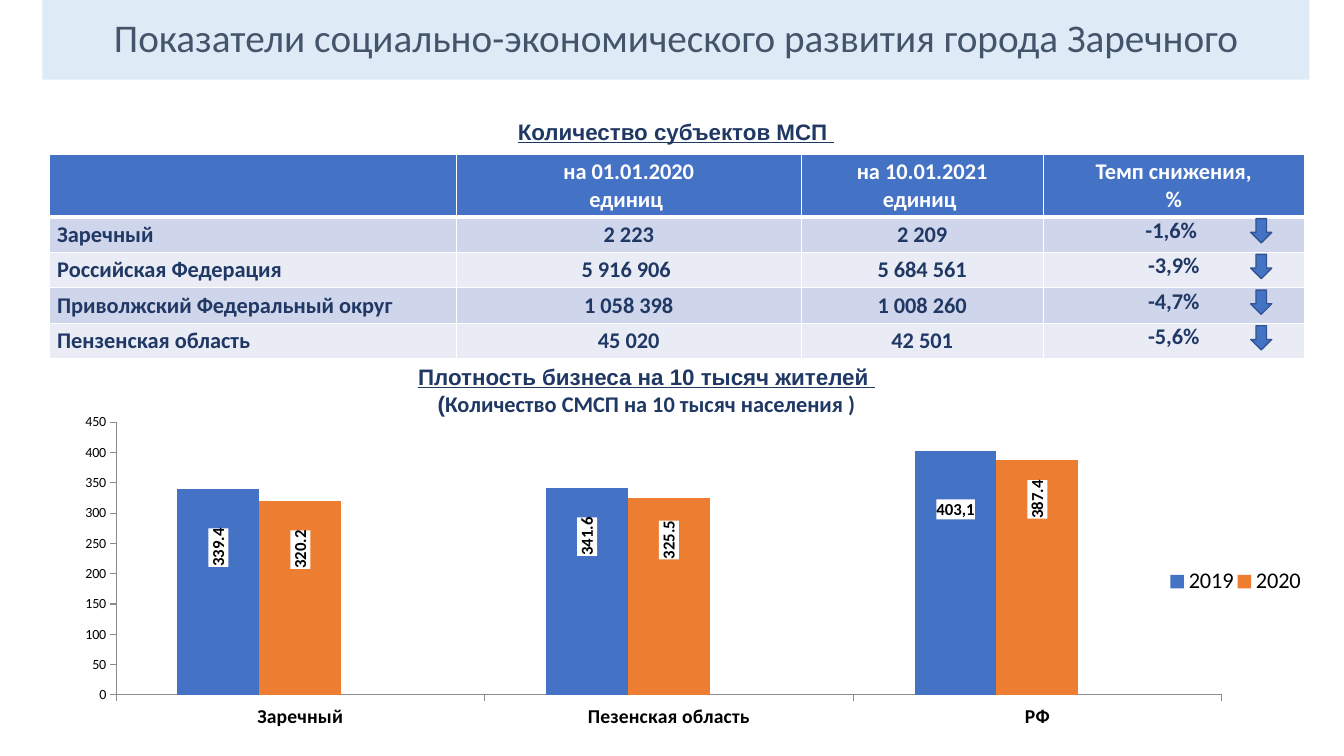
from pptx import Presentation
from pptx.chart.data import CategoryChartData
from pptx.dml.color import RGBColor
from pptx.enum.chart import XL_CHART_TYPE, XL_LABEL_POSITION, XL_LEGEND_POSITION, XL_TICK_MARK
from pptx.enum.shapes import MSO_SHAPE
from pptx.enum.text import MSO_ANCHOR, MSO_AUTO_SIZE, PP_ALIGN
from pptx.oxml import parse_xml
from pptx.oxml.ns import nsdecls, qn
from pptx.util import Cm, Pt

CENTER, LEFT, MIDDLE = PP_ALIGN.CENTER, PP_ALIGN.LEFT, MSO_ANCHOR.MIDDLE
COLUMN, DOWN_ARROW = XL_CHART_TYPE.COLUMN_CLUSTERED, MSO_SHAPE.DOWN_ARROW
INSIDE_END, LEGEND_RIGHT = XL_LABEL_POSITION.INSIDE_END, XL_LEGEND_POSITION.RIGHT
TICK_OUT, TICK_NONE = XL_TICK_MARK.OUTSIDE, XL_TICK_MARK.NONE
BLUE, ORANGE, GRAY = "4472C4", "ED7D31", "A5A5A5"
NAVY, WHITE, BLACK = "203864", "FFFFFF", "000000"
BANDS = ("CFD5EA", "E9EBF5")

ROWS = [
    ("", "на 01.01.2020\nединиц ", "на 10.01.2021\nединиц ", "Темп снижения,\n%"),
    ("Заречный", "2 223", "2 209", "-1,6% "),
    ("Российская Федерация", "5 916 906 ", "5 684 561", "-3,9%"),
    ("Приволжский Федеральный округ", "1 058 398", "1 008 260", "-4,7%"),
    ("Пензенская область", "45 020", "42 501", "-5,6%"),
]
COL_WIDTHS = (10.26, 8.69, 6.1, 6.58)
ROW_HEIGHTS = (1.27, 0.79, 0.79, 0.84, 0.79)

CATEGORIES = ("Заречный", "Пезенская область", "РФ")
# name, values, colour, downward shift of each label as a share of the chart height
SERIES = [
    ("2019", (339.4, 341.6, 403.1), BLUE, (0.11, 0.08, 0.14)),
    ("2020", (320.2, 325.5, 387.4), ORANGE, (0.08, 0.06, 0.05)),
    ("Series 3", (None, None, None), GRAY, ()),
]
LABEL_TEXTS = {("2019", 2): "403,1"}


def rgb(color):
    return RGBColor.from_string(color)


def set_fill(fill, color):
    fill.solid()
    fill.fore_color.rgb = rgb(color)


def set_font(font, size, color, bold=None, name="Calibri"):
    font.size, font.name, font.bold = Pt(size), name, bold
    font.color.rgb = rgb(color)


def solid_xml(tag, color, attrs=""):
    return parse_xml(f'<{tag} {nsdecls("a", "c")} {attrs}><a:solidFill>'
                     f'<a:srgbClr val="{color}"/></a:solidFill></{tag}>')


def set_layout(parent, index, **values):
    """Give a chart part a manual layout as its child number index."""
    for old in parent.findall(qn("c:layout")):
        parent.remove(old)
    items = "".join(f'<c:{tag} val="{val}"/>' for tag, val in values.items())
    parent.insert(index, parse_xml(f'<c:layout {nsdecls("c")}><c:manualLayout>{items}'
                                   '</c:manualLayout></c:layout>'))


class SlideBuilder:
    def __init__(self, prs):
        self.slide = prs.slides.add_slide(prs.slide_layouts[5])
        self.shapes = self.slide.shapes

    def title(self, text, left, top, width, height):
        sp = self.shapes.title
        sp.left, sp.top, sp.width, sp.height = Cm(left), Cm(top), Cm(width), Cm(height)
        set_fill(sp.fill, "DEEBF7")
        tf = sp.text_frame
        tf.text = text
        tf.auto_size, tf.vertical_anchor = MSO_AUTO_SIZE.NONE, MIDDLE
        p = tf.paragraphs[0]
        p.alignment, p.line_spacing = CENTER, 0.9
        set_font(p.font, 28, "44546A")

    def heading(self, text, left, top, width, height, note=()):
        """Add an underlined heading and an optional line of (text, font) runs."""
        tf = self.shapes.add_textbox(Cm(left), Cm(top), Cm(width), Cm(height)).text_frame
        tf.word_wrap = True
        p = tf.paragraphs[0]
        p.text, p.alignment = text, CENTER
        set_font(p.font, 16, NAVY, True, "Arial")
        p.font.underline = True
        if note:
            p = tf.add_paragraph()
            p.alignment = CENTER
        for part, name in note:
            r = p.add_run()
            r.text = part
            set_font(r.font, 16, NAVY, True, name)

    def table(self, left, top):
        table = self.shapes.add_table(len(ROWS), len(COL_WIDTHS), Cm(left), Cm(top),
                                      Cm(sum(COL_WIDTHS)), Cm(sum(ROW_HEIGHTS))).table
        for column, width in zip(table.columns, COL_WIDTHS):
            column.width = Cm(width)
        for i, (row, height) in enumerate(zip(table.rows, ROW_HEIGHTS)):
            row.height = Cm(height)
            for j, (cell, text) in enumerate(zip(row.cells, ROWS[i])):
                set_fill(cell.fill, BANDS[(i - 1) % 2] if i else BLUE)
                side, edge = (0, 0) if i and j == 3 else (0.2, 0.1)
                cell.margin_left = cell.margin_right = Cm(side)
                cell.margin_top = cell.margin_bottom = Cm(edge)
                if i == 0:
                    border = solid_xml("a:lnB", WHITE, f'w="{Pt(3)}"')
                    cell._tc.get_or_add_tcPr().insert(0, border)
                cell.text = text
                for p in cell.text_frame.paragraphs:
                    p.alignment = CENTER if j else LEFT
                    set_font(p.font, 16, NAVY if i else WHITE, True)

    def arrow(self, left, top):
        sp = self.shapes.add_shape(DOWN_ARROW, Cm(left), Cm(top), Cm(0.53), Cm(0.61))
        sp.shadow.inherit = False
        set_fill(sp.fill, BLUE)
        sp.line.color.rgb, sp.line.width = rgb("325491"), Pt(1)

    def chart(self, left, top, width, height):
        data = CategoryChartData()
        data.categories = CATEGORIES
        for name, values, _, _ in SERIES:
            data.add_series(name, values)
        chart = self.shapes.add_chart(COLUMN, Cm(left), Cm(top), Cm(width), Cm(height),
                                      data).chart
        chart.has_title = False
        set_font(chart.font, 10, BLACK)
        plot = chart.plots[0]
        plot.vary_by_categories, plot.gap_width = False, 150
        for axis in (chart.category_axis, chart.value_axis):
            axis.has_major_gridlines = False
            axis.major_tick_mark, axis.minor_tick_mark = TICK_OUT, TICK_NONE
            axis.format.line.color.rgb = rgb("8B8B8B")
        set_font(chart.category_axis.tick_labels.font, 14, BLACK, True)
        for series, (_, _, color, shifts) in zip(plot.series, SERIES):
            set_fill(series.format.fill, color)
            for i, shift in enumerate(shifts):
                self.bar_label(series, i, shift)
        for lines in chart.element.iter(qn("c:showLeaderLines")):
            lines.set("val", "0")
        self.legend(chart)
        set_layout(chart.element.find(".//" + qn("c:plotArea")), 0, layoutTarget="inner",
                   xMode="edge", yMode="edge", x=0.045, y=0.031, w=0.879, h=0.854)

    def bar_label(self, series, index, shift):
        """Put a white label into a bar, turned upright unless its text is fixed."""
        label = series.points[index].data_label
        text = LABEL_TEXTS.get((series.name, index))
        if text:
            r = label.text_frame.paragraphs[0].add_run()
            r.text = text
        set_font(r.font if text else label.font, 12, BLACK, True)
        label.position = INSIDE_END
        dlbl = series._element.xpath(f'c:dLbls/c:dLbl[c:idx/@val="{index}"]')[0]
        for body in dlbl.xpath("c:txPr/a:bodyPr"):
            body.set("rot", "-5400000")
        dlbl.xpath("c:txPr | c:dLblPos")[0].addprevious(solid_xml("c:spPr", WHITE))
        set_layout(dlbl, 1, x=0, y=shift)

    def legend(self, chart):
        chart.has_legend = True
        legend = chart.legend
        legend.position, legend.include_in_layout = LEGEND_RIGHT, False
        set_font(legend.font, 16, BLACK)
        element = chart.element.find(".//" + qn("c:legend"))
        element.insert(1, parse_xml(f'<c:legendEntry {nsdecls("c")}><c:idx val="2"/>'
                                    '<c:delete val="1"/></c:legendEntry>'))
        set_layout(element, 2, xMode="edge", yMode="edge", x=0.88, y=0.48, w=0.11, h=0.1)


def main():
    prs = Presentation()
    prs.slide_width, prs.slide_height = Cm(33.87), Cm(19.05)
    s = SlideBuilder(prs)
    s.title("Показатели социально-экономического развития города Заречного",
            1.07, 0, 31.93, 2.01)
    s.table(1.24, 3.89)
    s.heading("Количество субъектов МСП ", 1.14, 2.84, 31.78, 0.94)
    for i in range(len(ROWS) - 1):
        s.arrow(31.52, 5.51 + 0.9 * i)
    s.chart(1.5, 10.39, 31.7, 8.05)
    s.heading("Плотность бизнеса на 10 тысяч жителей ", 10.21, 9.02, 12.17, 1.63,
              note=[("(", "Arial"), ("Количество СМСП на 10 тысяч населения )", "Calibri")])
    prs.save("out.pptx")


if __name__ == "__main__":
    main()
